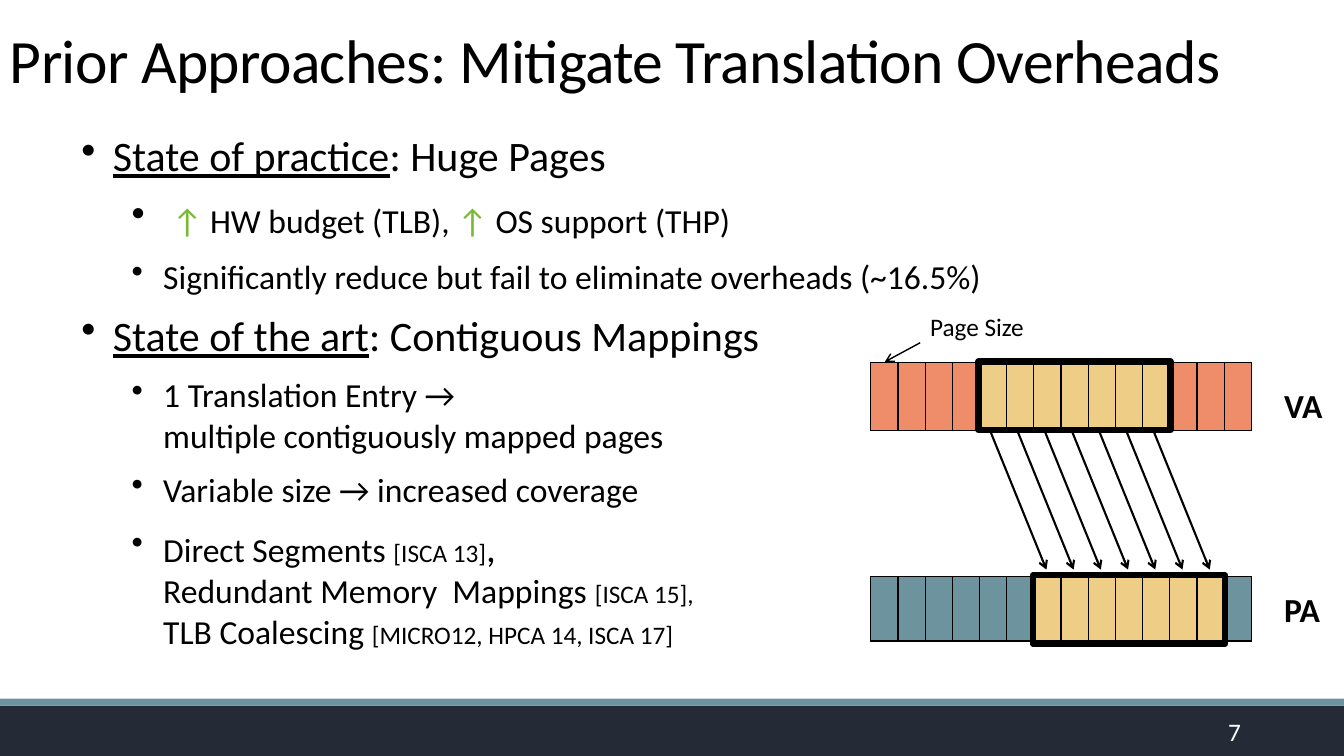
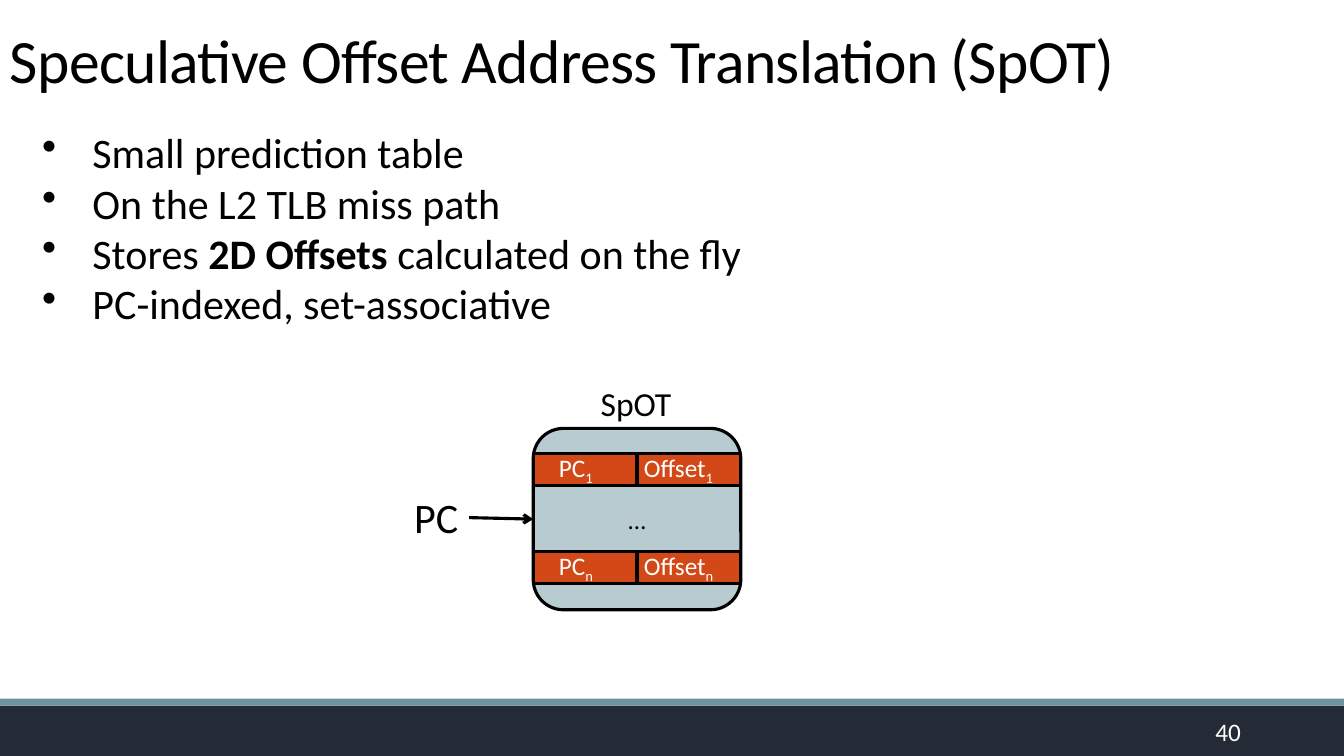
from pptx import Presentation
from pptx.dml.color import RGBColor as Rgb
from pptx.enum.shapes import MSO_CONNECTOR as Link, MSO_SHAPE as Form
from pptx.enum.text import MSO_ANCHOR as Anchor, MSO_AUTO_SIZE as Auto, PP_ALIGN as Align
from pptx.oxml.ns import qn
from pptx.util import Pt
from lxml.etree import SubElement as Sub

FONT = "Calibri"
WIDE, HIGH = 960, 540
INK = {
    "black": "000000", "white": "FFFFFF", "navy": "242B37", "teal": "6D939E",
    "green": "78B832", "coral": "EF8C6A", "sand": "EECD86", "mist": "B8CBD0",
    "rust": "D34817",
}


def shade(name):
    """Return the named colour."""
    return Rgb.from_string(INK[name])


def say(para, text, size, color="black", bold=False, under=False, **extra):
    """Add one run, with extra run attributes; each newline breaks the line."""
    for i, part in enumerate(text.split("\n")):
        if i:
            para.add_line_break()
        if part:
            run = para.add_run()
            run.text = part
            font = run.font
            font.name, font.size, font.bold = FONT, Pt(size), bold
            font.underline = under
            font.color.rgb = shade(color)
            for key, value in extra.items():
                run._r.get_or_add_rPr().set(key, value)


def text_box(slide, x, y, w, h, wrap=True, anchor=Anchor.TOP):
    """Add an empty text box."""
    box = slide.shapes.add_textbox(Pt(x), Pt(y), Pt(w), Pt(h))
    box.text_frame.word_wrap = wrap
    box.text_frame.vertical_anchor = anchor
    return box


def label(slide, x, y, w, h, text, size, bold=False):
    """Add a one-line label that hugs its text."""
    box = text_box(slide, x, y, w, h, wrap=False)
    box.text_frame.auto_size = Auto.SHAPE_TO_FIT_TEXT
    say(box.text_frame.paragraphs[0], text, size, bold=bold)
    return box


def block(slide, x, y, w, h, fill=None, edge=0, form=Form.RECTANGLE):
    """Add a flat shape with an optional fill and black edge."""
    shape = slide.shapes.add_shape(form, Pt(x), Pt(y), Pt(w), Pt(h))
    shape.shadow.inherit = False
    if fill:
        shape.fill.solid()
        shape.fill.fore_color.rgb = shade(fill)
    else:
        shape.fill.background()
    if edge:
        shape.line.color.rgb = shade("black")
        shape.line.width = Pt(edge)
    else:
        shape.line.fill.background()
    return shape


def wire(slide, x1, y1, x2, y2, width, arrow=True):
    """Add a straight black line, with an arrowhead if asked."""
    link = slide.shapes.add_connector(Link.STRAIGHT, Pt(x1), Pt(y1), Pt(x2), Pt(y2))
    link.line.color.rgb = shade("black")
    link.line.width = Pt(width)
    props = link._element.spPr
    if arrow:
        Sub(props.find(qn("a:ln")), qn("a:tailEnd"), type="arrow")
    Sub(props, qn("a:effectLst"))
    return link


def bullets(slide, x, y, w, h, items, step, after=0):
    """Add a bulleted list of (level, runs) items."""
    frame = text_box(slide, x, y, w, h).text_frame
    for i, (level, runs) in enumerate(items):
        para = frame.add_paragraph() if i else frame.paragraphs[0]
        props = para._p.get_or_add_pPr()
        props.set("marL", str(Pt(step + 36 * level)))
        props.set("indent", str(-Pt(step)))
        Sub(props, qn("a:buChar"), char="•")
        para.level = level
        para.space_after = Pt(after)
        for text, size, style in runs:
            say(para, text, size, **style)


def base(deck, title, number):
    """Add a slide with the shared bands, title and slide number."""
    slide = deck.slides.add_slide(deck.slide_layouts[6])
    block(slide, 0, 504, WIDE, 36, "navy")
    block(slide, 0, 499, WIDE, 5, "teal")
    head = text_box(slide, 0, 0.72, WIDE, 71.28, anchor=Anchor.BOTTOM)
    para = head.text_frame.paragraphs[0]
    para.line_spacing = 0.85
    say(para, title, 44, spc="-50")
    foot = text_box(slide, 790.5, 508.3, 103, 28.8, anchor=Anchor.MIDDLE)
    para = foot.text_frame.paragraphs[0]
    para.alignment = Align.RIGHT
    say(para, str(number), 18, "white")
    return slide


def strip(slide, x, y, w, h, color, first, count, total=14):
    """Add a row of pages with a run of mapped pages."""
    table = slide.shapes.add_table(1, total, Pt(x), Pt(y), Pt(w), Pt(h)).table
    table.first_row = table.horz_banding = False
    table.rows[0].height = Pt(h)
    for i, cell in enumerate(table.rows[0].cells):
        table.columns[i].width = Pt(w / total)
        cell.margin_left = cell.margin_right = 0
        props = cell._tc.get_or_add_tcPr()
        for side in ("lnL", "lnR", "lnT", "lnB"):
            line = Sub(props, qn("a:" + side), w=str(Pt(1)))
            paint = Sub(line, qn("a:solidFill"))
            Sub(paint, qn("a:srgbClr"), val=INK["black"])
        cell.fill.solid()
        mapped = first <= i < first + count
        cell.fill.fore_color.rgb = shade("sand" if mapped else color)


def mapping(slide, x, y, w, h):
    """Draw the virtual pages, the physical pages and the arrows between."""
    col, count, tall = w / 14, 7, 48.24
    low = 46.08
    rows = ((y, tall, "coral", 4, "VA"), (y + h - low, low, "teal", 6, "PA"))
    for top, high, color, first, name in rows:
        strip(slide, x, top, w, high, color, first, count)
        label(slide, x + w + 16, top + (12 if name == "VA" else 5), 42, 36, name, 24, True)
    label(slide, x + 35.3, y - 40.3, 82, 28.8, "Page Size", 18)
    wire(slide, x + 35.3, y - 14.4, x + 10, y - 0.7, 1)
    for i in range(count):
        start = x + (4.38 + i) * col
        wire(slide, start, y + tall, start + 40.3, y + h - low - 5, 1.5)
    for top, high, color, first, name in rows:
        block(slide, x + first * col - 0.7, top - 1, count * col + 1, 49, edge=4.5)


def entry(slide, x, y, w, h, mark):
    """Draw one table entry with its counter and offset fields."""
    row = block(slide, x, y, w, h, "rust", 2.25)
    frame = row.text_frame
    frame.word_wrap = True
    frame.vertical_anchor = Anchor.MIDDLE
    frame.margin_left, frame.margin_right = Pt(18.4), 0
    frame.margin_top = frame.margin_bottom = 0
    para = frame.paragraphs[0]
    tabs = Sub(para._p.get_or_add_pPr(), qn("a:tabLst"))
    Sub(tabs, qn("a:tab"), pos=str(Pt(60.7)), algn="l")
    para.alignment = Align.LEFT
    for word in ("PC", "\tOffset"):
        say(para, word, 18, "white")
        say(para, mark, 18, "white", baseline="-25000")
    split = wire(slide, x + w / 2, y, x + w / 2, y + h, 2.25, False)
    split.begin_connect(row, 0)
    split.end_connect(row, 2)


def spot(slide, x, y, w, h):
    """Draw the prediction table and the counter that feeds it."""
    body = block(slide, x, y, w, h, "mist", 2.25, Form.ROUNDED_RECTANGLE)
    body.text_frame.vertical_anchor = Anchor.MIDDLE
    para = body.text_frame.paragraphs[0]
    para.alignment = Align.CENTER
    say(para, "…", 18)
    label(slide, x + 41, y - 36, 65.5, 36, "SpOT", 24)
    for top, mark in ((18, "1"), (88, "n")):
        entry(slide, x, y + top, w, 22.7, mark)
    source = label(slide, x - 92.2, y + 41.8, 46.4, 43.9, "PC", 30)
    feed = wire(slide, x - 45.8, y + h / 2, x, y + h / 2, 2.25)
    feed.begin_connect(source, 3)
    feed.end_connect(body, 1)


def prior(deck):
    """Build the slide on prior approaches."""
    slide = base(deck, "Prior Approaches: Mitigate Translation Overheads", 7)
    under, green = {"under": True}, {"color": "green"}
    items = [
        (0, [("State of practice", 30, under), (": Huge Pages", 30, {})]),
        (1, [(" ", 28, {}), ("↑ ", 24, green), ("HW budget (TLB), ", 24, {}),
             ("↑ ", 24, green), ("OS support (THP)", 24, {})]),
        (1, [("Significantly reduce but fail to eliminate overheads (~16.5%)", 24, {})]),
        (0, [("State of the art", 30, under), (": Contiguous Mappings", 30, {})]),
        (1, [("1 Translation Entry →\nmultiple contiguously mapped pages", 24, {})]),
        (1, [("Variable size → increased coverage", 24, {})]),
        (1, [("Direct Segments ", 24, {}), ("[ISCA 13]", 18, {}), (",\n", 28, {}),
             ("Redundant Memory  Mappings ", 24, {}), ("[ISCA 15],\n", 18, {}),
             ("TLB Coalescing ", 24, {}), ("[MICRO12, HPCA 14, ISCA 17]", 18, {})]),
    ]
    bullets(slide, 51, 89.3, 777.6, 388, items, 22.5, 10)
    mapping(slide, 622, 259.2, 272.16, 198.72)


def scheme(deck):
    """Build the slide on the prediction table."""
    slide = base(deck, "Speculative Offset Address Translation (SpOT)", 40)
    items = [
        (0, [("Small prediction table", 30, {})]),
        (0, [("On the L2 TLB miss path", 30, {})]),
        (0, [("Stores ", 30, {}), ("2D Offsets ", 30, {"bold": True}),
             ("calculated on the fly", 30, {})]),
        (0, [("PC-indexed, set-associative", 30, {})]),
    ]
    bullets(slide, 23, 87, 930, 152.6, items, 36)
    spot(slide, 380.9, 306, 148.3, 129.6)


def main():
    """Build and save the deck."""
    deck = Presentation()
    deck.slide_width, deck.slide_height = Pt(WIDE), Pt(HIGH)
    prior(deck)
    scheme(deck)
    deck.save("out.pptx")


if __name__ == "__main__":
    main()
